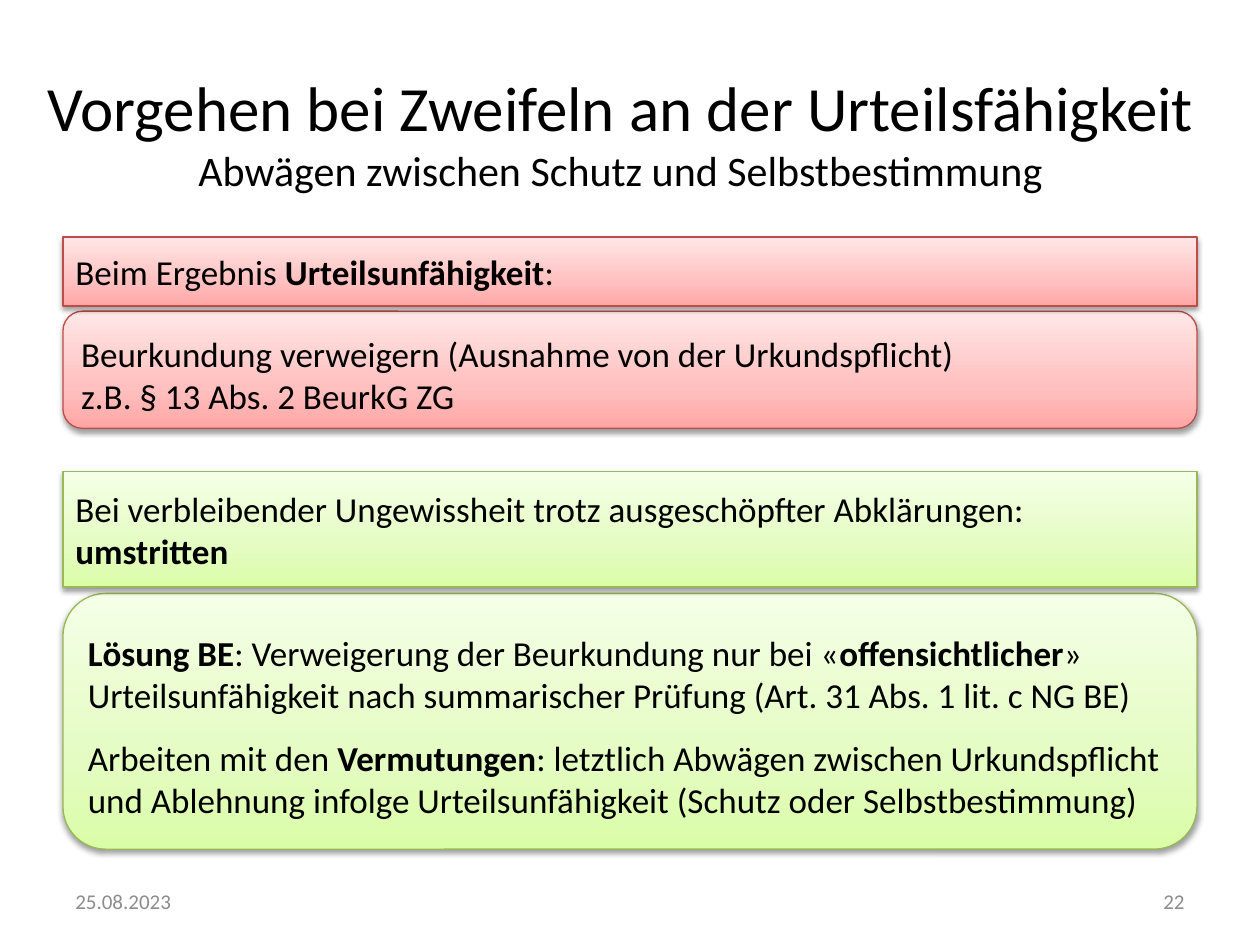
from copy import deepcopy

from lxml.etree import SubElement
from pptx import Presentation
from pptx.dml.color import RGBColor
from pptx.enum.shapes import MSO_SHAPE
from pptx.enum.text import MSO_ANCHOR, MSO_AUTO_SIZE, PP_ALIGN
from pptx.oxml.ns import qn
from pptx.util import Inches, Pt

BLACK = RGBColor(0, 0, 0)
GREY = RGBColor(0x8C, 0x8C, 0x8C)
RED_LINE = RGBColor(0xBF, 0x4C, 0x48)
GREEN_LINE = RGBColor(0x98, 0xB9, 0x55)
RED_STOPS = [(0, RGBColor(0xFF, 0xA6, 0xA5)), (0.35, RGBColor(0xFF, 0xC0, 0xBF)),
             (1, RGBColor(0xFF, 0xE7, 0xE7))]
GREEN_STOPS = [(0, RGBColor(0xDA, 0xFD, 0xA7)), (0.35, RGBColor(0xE4, 0xFC, 0xC2)),
               (1, RGBColor(0xF5, 0xFF, 0xE7))]
RED = (RED_STOPS, RED_LINE)
GREEN = (GREEN_STOPS, GREEN_LINE)

PAGE_WIDTH, PAGE_HEIGHT = 10, 7.5
MARGIN = PAGE_WIDTH * 0.05
CONTENT_WIDTH = PAGE_WIDTH - 2 * MARGIN
FOOTER_TOP, FOOTER_WIDTH, FOOTER_HEIGHT = 6.95, 2.33, 0.4


def set_all(target, values):
    for name, value in values.items():
        setattr(target, name, value)


def add_span(para, text, size, color=BLACK, bold=False):
    span = para.add_run()
    span.text = text
    set_all(span.font, {"name": "Calibri", "size": Pt(size), "bold": bold})
    span.font.color.rgb = color


def fill_gradient(shape, stops):
    """Fill from bottom to top through any number of (position, colour) stops."""
    shape.fill.gradient()
    shape.fill.gradient_angle = 90
    stop_list = shape.fill._xPr.find(qn("a:gradFill")).find(qn("a:gsLst"))
    while len(stop_list) < len(stops):
        stop_list.append(deepcopy(stop_list[0]))
    for stop, (position, color) in zip(shape.fill.gradient_stops, stops):
        stop.position = position
        stop.color.rgb = color


def add_soft_shadow(shape):
    shape.shadow.inherit = False
    effects = shape._element.spPr.find(qn("a:effectLst"))
    shadow = SubElement(effects, qn("a:outerShdw"), blurRad="39400", dist="20300",
                        dir="5400000", rotWithShape="0")
    color = SubElement(shadow, qn("a:srgbClr"), val="000000")
    SubElement(color, qn("a:alpha"), val="38000")


def add_panel(page, kind, top, height, theme, paragraphs, drop=0):
    """Add a full-width panel; paragraphs are (space before, [(text, bold), ...])."""
    stops, line_color = theme
    panel = page.shapes.add_shape(kind, Inches(MARGIN), Inches(top),
                                  Inches(CONTENT_WIDTH), Inches(height))
    fill_gradient(panel, stops)
    panel.line.color.rgb = line_color
    panel.line.width = Pt(0.75)
    add_soft_shadow(panel)
    frame = panel.text_frame
    set_all(frame, {"word_wrap": True, "vertical_anchor": MSO_ANCHOR.MIDDLE,
                    "margin_top": Inches(drop), "margin_bottom": 0})
    for index, (space, spans) in enumerate(paragraphs):
        para = frame.add_paragraph() if index else frame.paragraphs[0]
        set_all(para, {"alignment": PP_ALIGN.LEFT, "space_before": Pt(space)})
        for text, bold in spans:
            add_span(para, text, 20, bold=bold)


def set_title(page, heading, subheading):
    title = page.shapes.title
    set_all(title, {"left": Inches(0.12), "top": Inches(0.44),
                    "width": Inches(9.61), "height": Inches(1.21)})
    set_all(title.text_frame, {"word_wrap": True, "auto_size": MSO_AUTO_SIZE.NONE,
                               "vertical_anchor": MSO_ANCHOR.MIDDLE})
    para = title.text_frame.paragraphs[0]
    para.alignment = PP_ALIGN.CENTER
    add_span(para, heading, 36)
    para.add_line_break()
    add_span(para, subheading, 24)


def add_footer(page, text, left, alignment):
    box = page.shapes.add_textbox(Inches(left), Inches(FOOTER_TOP),
                                  Inches(FOOTER_WIDTH), Inches(FOOTER_HEIGHT))
    set_all(box.text_frame, {"word_wrap": True, "vertical_anchor": MSO_ANCHOR.MIDDLE})
    para = box.text_frame.paragraphs[0]
    para.alignment = alignment
    add_span(para, text, 12, GREY)


def main():
    deck = Presentation()
    set_all(deck, {"slide_width": Inches(PAGE_WIDTH), "slide_height": Inches(PAGE_HEIGHT)})
    page = deck.slides.add_slide(deck.slide_layouts.get_by_name("Title Only"))

    set_title(page, "Vorgehen bei Zweifeln an der Urteilsfähigkeit",
              "Abwägen zwischen Schutz und Selbstbestimmung")
    add_footer(page, "25.08.2023", MARGIN, PP_ALIGN.LEFT)
    add_footer(page, "22", PAGE_WIDTH - MARGIN - FOOTER_WIDTH, PP_ALIGN.RIGHT)

    add_panel(page, MSO_SHAPE.ROUNDED_RECTANGLE, 2.47, 0.93, RED, [
        (0, [("Beurkundung verweigern (Ausnahme von der Urkundspflicht)", False)]),
        (0, [("z.B. § 13 Abs. 2 BeurkG ZG", False)]),
    ], drop=0.07)
    add_panel(page, MSO_SHAPE.ROUNDED_RECTANGLE, 4.71, 2.03, GREEN, [
        (0, [("Lösung BE", True), (": Verweigerung der Beurkundung nur bei «", False),
             ("offensichtlicher", True), ("»", False)]),
        (0, [("Urteilsunfähigkeit nach summarischer Prüfung "
              "(Art. 31 Abs. 1 lit. c NG BE)", False)]),
        (12, [("Arbeiten mit den ", False), ("Vermutungen", True),
              (": letztlich Abwägen zwischen Urkundspflicht und Ablehnung infolge "
               "Urteilsunfähigkeit (Schutz oder Selbstbestimmung)", False)]),
    ], drop=0.07)
    add_panel(page, MSO_SHAPE.RECTANGLE, 1.88, 0.55, RED, [
        (0, [("Beim Ergebnis ", False), ("Urteilsunfähigkeit", True), (":", False)]),
    ])
    add_panel(page, MSO_SHAPE.RECTANGLE, 3.74, 0.92, GREEN, [
        (0, [("Bei verbleibender Ungewissheit trotz ausgeschöpfter Abklärungen:", False)]),
        (0, [("umstritten", True)]),
    ])
    deck.save("out.pptx")


if __name__ == "__main__":
    main()
